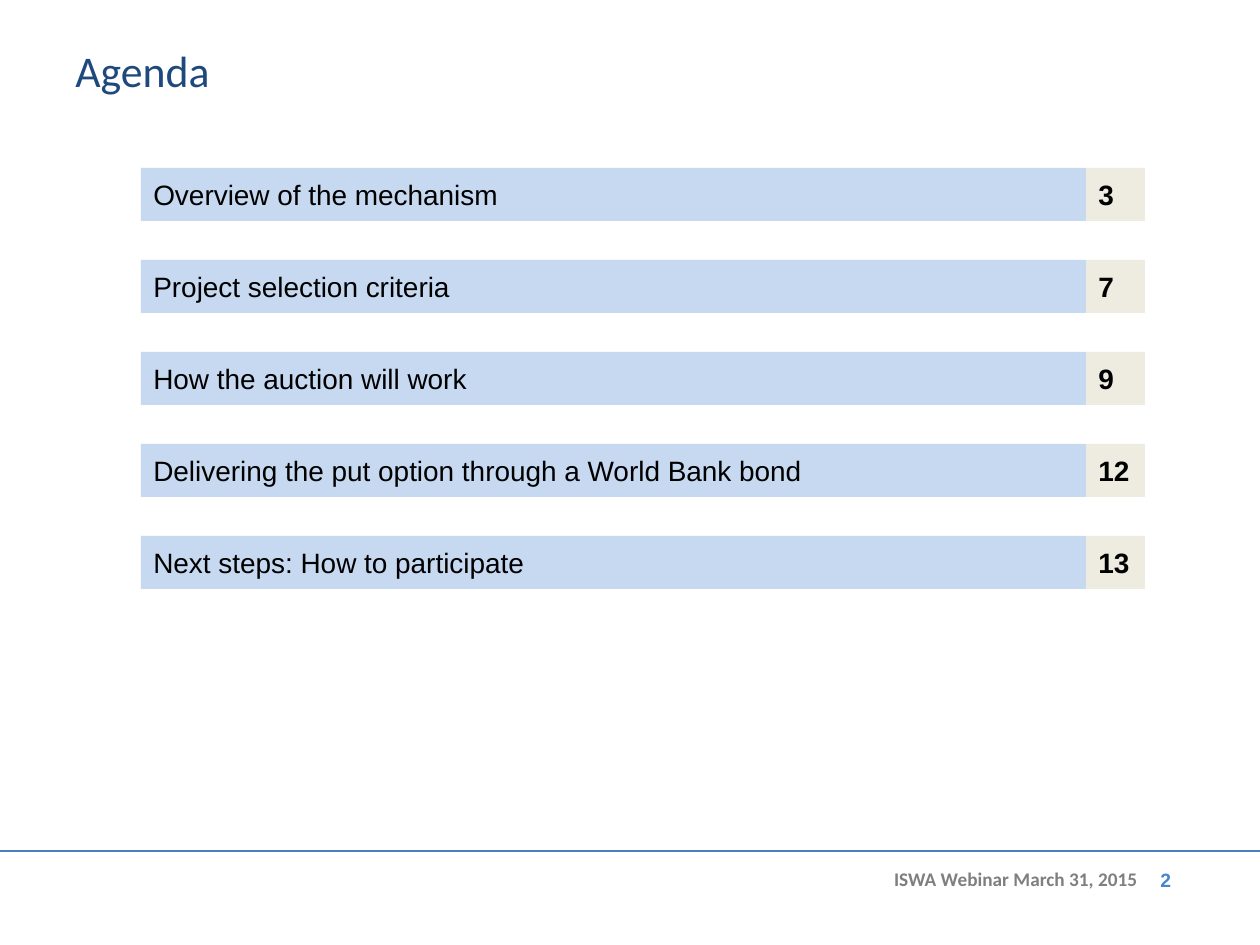
import pptx
import pptx.util
import pptx.dml.color
import pptx.enum.shapes
import pptx.enum.text
import pptx.oxml.ns
from lxml import etree

SCALE = 914400 / 126
ALIGN = pptx.enum.text.PP_ALIGN
ANCHOR = pptx.enum.text.MSO_ANCHOR

TITLE_FORMAT = {"name": "Calibri", "size": 25, "bold": False, "color": "1F497D"}
TOPIC_FORMAT = {"name": "Arial", "size": 16, "bold": False, "color": "000000"}
PAGE_FORMAT = {**TOPIC_FORMAT, "bold": True}
EVENT_FORMAT = {"name": "Calibri", "size": 11, "bold": True, "color": "7F7F7F"}
NUMBER_FORMAT = {"name": "Arial", "size": 11, "bold": True, "color": "4785D1"}

AGENDA = [
    ("Overview of the mechanism", "3"),
    ("Project selection criteria", "7"),
    ("How the auction will work", "9"),
    ("Delivering the put option through a World Bank bond", "12"),
    ("Next steps: How to participate", "13"),
]


def px(length):
    return pptx.util.Emu(round(length * SCALE))


def paint(color_format, value):
    color_format.rgb = pptx.dml.color.RGBColor.from_string(value)


def write(frame, wording, style, align=ALIGN.LEFT, anchor=ANCHOR.TOP):
    frame.word_wrap = True
    frame.vertical_anchor = anchor
    paragraph = frame.paragraphs[0]
    paragraph.alignment = align
    run = paragraph.add_run()
    run.text = wording
    for key, value in style.items():
        if key == "color":
            paint(run.font.color, value)
        else:
            setattr(run.font, key, pptx.util.Pt(value) if key == "size" else value)


def add_label(slide, box, wording, style, align=ALIGN.LEFT):
    label = slide.shapes.add_textbox(*map(px, box))
    write(label.text_frame, wording, style, align)


def add_bar(slide, box, fill, wording, style):
    bar = slide.shapes.add_shape(
        pptx.enum.shapes.MSO_SHAPE.RECTANGLE, *map(px, box))
    bar.shadow.inherit = False
    bar.fill.solid()
    paint(bar.fill.fore_color, fill)
    bar.line.fill.background()
    write(bar.text_frame, wording, style, anchor=ANCHOR.MIDDLE)


def add_agenda(slide, box):
    left, top, width, height = box
    bar_height, page_width = 53, 59
    topic_width = width - page_width
    pitch = (height - bar_height) / (len(AGENDA) - 1)
    for index, (topic, page) in enumerate(AGENDA):
        y = top + index * pitch
        add_bar(slide, (left + topic_width, y, page_width, bar_height),
                "EEECE1", page, PAGE_FORMAT)
        add_bar(slide, (left, y, topic_width, bar_height),
                "C6D9F1", topic, TOPIC_FORMAT)


def add_footer(slide, box):
    left, top, width, height = box
    rule = slide.shapes.add_connector(
        pptx.enum.shapes.MSO_CONNECTOR.STRAIGHT,
        px(left), px(top), px(left + width), px(top))
    paint(rule.line.color, "4B7EBC")
    rule.line.width = pptx.util.Pt(1.5)
    etree.SubElement(rule.element.spPr, pptx.oxml.ns.qn("a:effectLst"))
    add_label(slide, (left + 431, top + 10, 719, 37),
              "ISWA Webinar March 31, 2015", EVENT_FORMAT, ALIGN.RIGHT)
    add_label(slide, (left + 1148, top + 11, 55, 44), "2", NUMBER_FORMAT)


def main():
    deck = pptx.Presentation()
    deck.slide_width, deck.slide_height = px(1260), px(945)
    slide = deck.slides.add_slide(deck.slide_layouts[6])
    add_footer(slide, (0, 851, 1260, 94))
    add_label(slide, (63, 38, 1100, 66), "Agenda", TITLE_FORMAT)
    add_agenda(slide, (141, 168, 1004, 421))
    deck.save("out.pptx")


if __name__ == "__main__":
    main()
